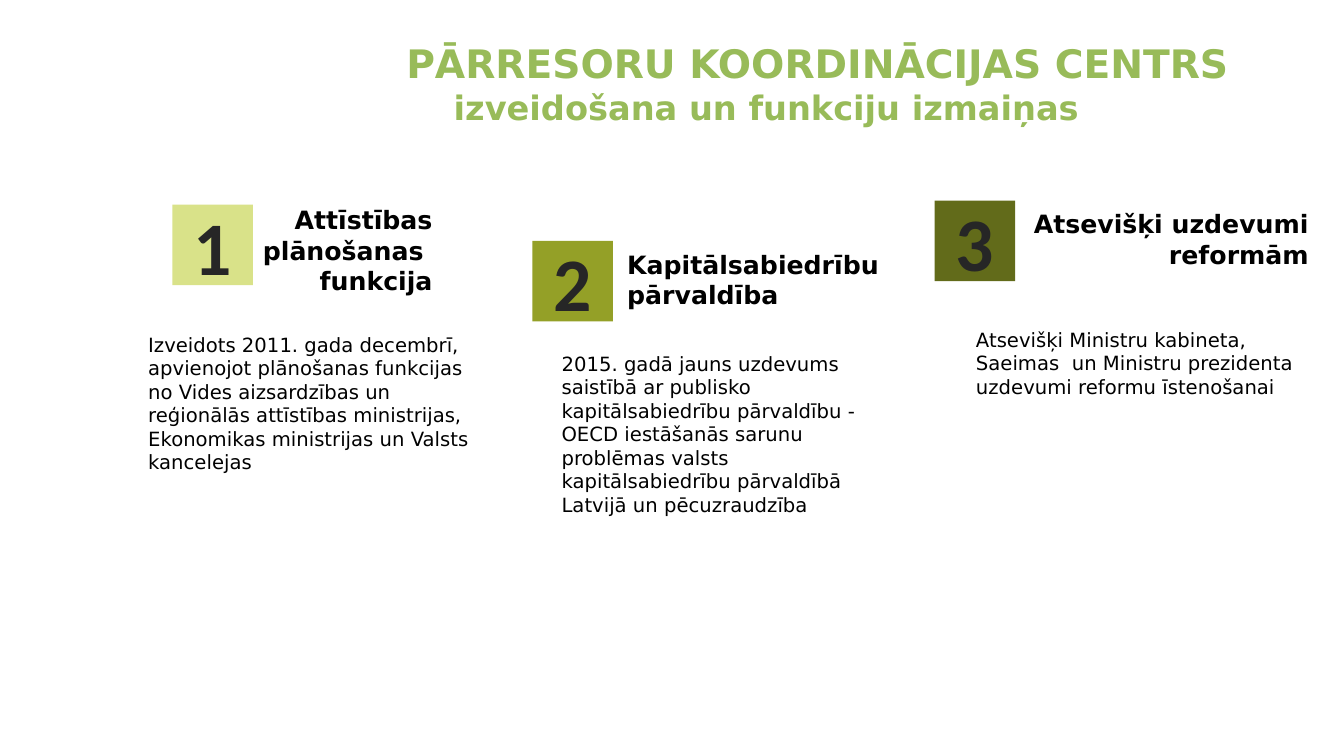
from pptx import Presentation, util as u
from pptx.dml import color
from pptx.enum import shapes, text


def tint(code):
    return color.RGBColor.from_string(code)


class Deck:
    """Holds the text styles and the current slide, and adds elements to it."""

    styles = {
        "title": ({"size": u.Pt(28), "bold": True}, "98BB59", "DejaVu Sans"),
        "sub": ({"size": u.Pt(24), "bold": True}, "98BB59", "DejaVu Sans"),
        "head": ({"size": u.Pt(18), "bold": True}, "000000", "DejaVu Sans"),
        "body": ({"size": u.Pt(14), "bold": False}, "000000", "DejaVu Sans"),
        "num": ({"size": u.Pt(54), "bold": True}, "262626", "Calibri"),
    }

    def __init__(self):
        self.file = Presentation()
        self.file.slide_width = u.Inches(13.33)
        self.file.slide_height = u.Inches(7.5)
        self.slide = self.file.slides.add_slide(self.file.slide_layouts[5])

    def add_words(self, para, words, style, align):
        para.alignment = align
        run = para.add_run()
        run.text = words
        form, code, face = self.styles[style]
        for name, value in {**form, "name": face}.items():
            setattr(run.font, name, value)
        run.font.color.rgb = tint(code)

    def fill(self, frame, lines, align, **form):
        for name, value in {"word_wrap": True, **form}.items():
            setattr(frame, name, value)
        for i, (words, style) in enumerate(lines):
            para = frame.add_paragraph() if i else frame.paragraphs[0]
            self.add_words(para, words, style, align)

    def title(self, place, main, sub):
        box = self.slide.shapes.title
        for name, value in zip(("left", "top", "width", "height"), place):
            setattr(box, name, u.Inches(value))
        self.fill(box.text_frame, [(main, "title"), (sub, "sub")],
                  text.PP_ALIGN.LEFT, vertical_anchor=text.MSO_ANCHOR.TOP,
                  auto_size=text.MSO_AUTO_SIZE.NONE)
        props = box.text_frame.paragraphs[1]._p.get_or_add_pPr()
        props.set("marL", str(u.Inches(0.47)))

    def label(self, place, lines, style, align=text.PP_ALIGN.LEFT,
              anchor=text.MSO_ANCHOR.TOP):
        box = self.slide.shapes.add_textbox(*map(u.Inches, place))
        self.fill(box.text_frame, [(line, style) for line in lines], align,
                  margin_left=0, margin_right=0, vertical_anchor=anchor,
                  auto_size=text.MSO_AUTO_SIZE.SHAPE_TO_FIT_TEXT)

    def badge(self, left, top, num, code):
        side = u.Inches(0.8)
        box = self.slide.shapes.add_shape(
            shapes.MSO_SHAPE.RECTANGLE, u.Inches(left), u.Inches(top), side, side)
        box.shadow.inherit = False
        box.fill.solid()
        box.fill.fore_color.rgb = tint(code)
        box.line.fill.background()
        self.fill(box.text_frame, [(str(num), "num")], text.PP_ALIGN.CENTER,
                  vertical_anchor=text.MSO_ANCHOR.MIDDLE)


def main():
    left, right = text.PP_ALIGN.LEFT, text.PP_ALIGN.RIGHT
    steps = [
        {"badge": (1.71, 2.03), "code": "D9E289",
         "head": (2.35, 1.97, 1.94, 1.01), "align": right,
         "name": ["Attīstības plānošanas ", "funkcija"],
         "body": (1.47, 3.25, 3.2, 1.51),
         "words": "Izveidots 2011. gada decembrī, apvienojot plānošanas "
                  "funkcijas no Vides aizsardzības un reģionālās attīstības "
                  "ministrijas, Ekonomikas ministrijas un Valsts kancelejas"},
        {"badge": (5.28, 2.39), "code": "94A027",
         "head": (6.22, 2.41, 3.61, 0.71), "align": left,
         "name": ["Kapitālsabiedrību pārvaldība"],
         "body": (5.57, 3.44, 3.2, 1.75),
         "words": "2015. gadā jauns uzdevums saistībā ar publisko "
                  "kapitālsabiedrību pārvaldību - OECD iestāšanās sarunu "
                  "problēmas valsts kapitālsabiedrību pārvaldībā Latvijā un "
                  "pēcuzraudzība"},
        {"badge": (9.27, 1.99), "code": "626B1A",
         "head": (9.04, 2.01, 3.94, 0.71), "align": right,
         "name": ["Atsevišķi uzdevumi reformām"],
         "body": (9.68, 3.2, 3.49, 0.81),
         "words": "Atsevišķi Ministru kabineta, Saeimas  un Ministru "
                  "prezidenta uzdevumi reformu īstenošanai"},
    ]
    deck = Deck()
    deck.title((3.93, 0.34, 8.89, 1.13), "PĀRRESORU KOORDINĀCIJAS CENTRS",
               "izveidošana un funkciju izmaiņas")
    for num, step in enumerate(steps, 1):
        deck.label(step["head"], step["name"], "head", step["align"],
                   text.MSO_ANCHOR.BOTTOM)
        deck.label(step["body"], [step["words"]], "body")
        deck.badge(*step["badge"], num, step["code"])
    deck.file.save("out.pptx")


if __name__ == "__main__":
    main()
